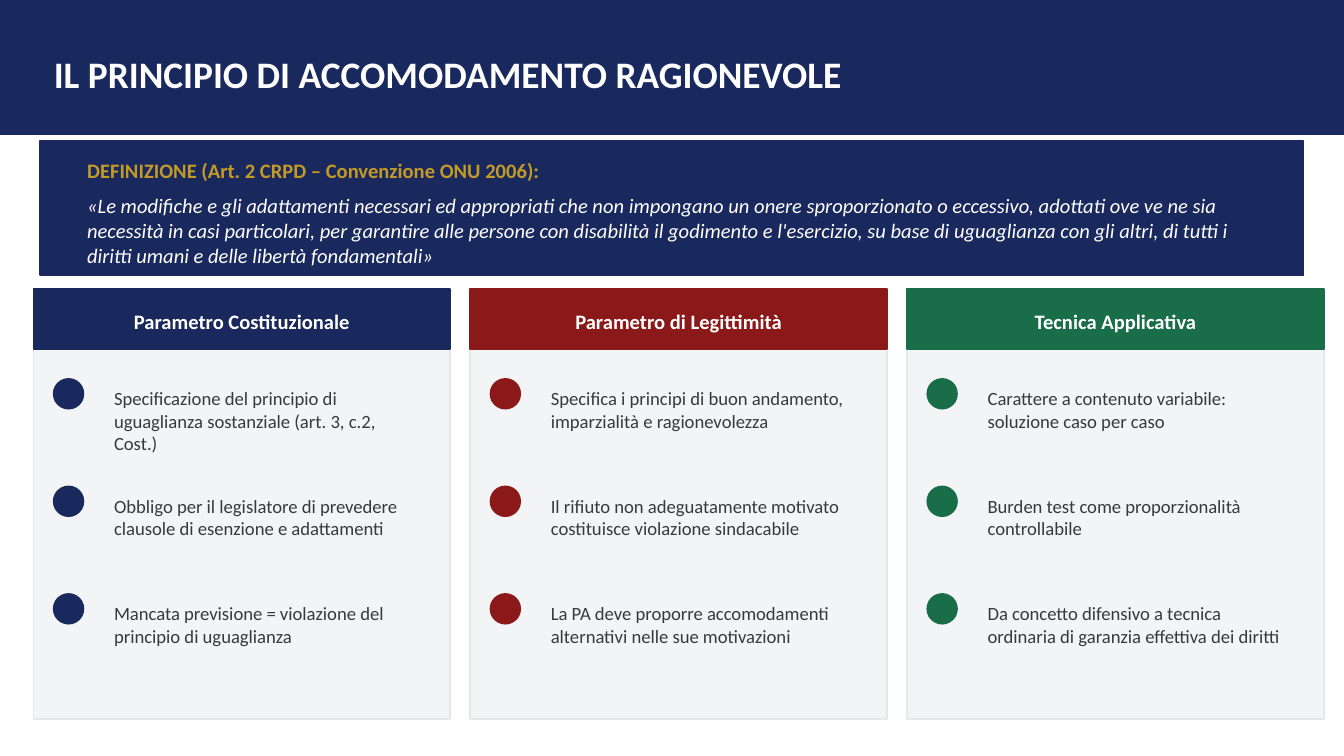
import pptx
import pptx.dml.color
import pptx.enum.shapes
import pptx.enum.text
import pptx.util
from dataclasses import dataclass

Inches = pptx.util.Inches
SHAPE = pptx.enum.shapes.MSO_SHAPE
ALIGN = pptx.enum.text.PP_ALIGN


@dataclass(frozen=True)
class Theme:
    font: str = "Calibri"
    navy: str = "19295D"
    red: str = "8B1919"
    green: str = "196D49"
    gold: str = "C49A27"
    white: str = "FFFFFF"
    panel: str = "F3F4F6"
    border: str = "E5E7EB"
    ink: str = "393939"
    title_size: int = 20
    heading_size: int = 11
    body_size: int = 10


THEME = Theme()

COLUMNS = [
    ("Parametro Costituzionale", THEME.navy, [
        "Specificazione del principio di uguaglianza sostanziale (art. 3, c.2, Cost.)",
        "Obbligo per il legislatore di prevedere clausole di esenzione e adattamenti",
        "Mancata previsione = violazione del principio di uguaglianza",
    ]),
    ("Parametro di Legittimità", THEME.red, [
        "Specifica i principi di buon andamento, imparzialità e ragionevolezza",
        "Il rifiuto non adeguatamente motivato costituisce violazione sindacabile",
        "La PA deve proporre accomodamenti alternativi nelle sue motivazioni",
    ]),
    ("Tecnica Applicativa", THEME.green, [
        "Carattere a contenuto variabile: soluzione caso per caso",
        "Burden test come proporzionalità controllabile",
        "Da concetto difensivo a tecnica ordinaria di garanzia effettiva dei diritti",
    ]),
]


def rgb(value):
    return pptx.dml.color.RGBColor.from_string(value)


def add_block(slide, kind, x, y, w, h, fill, line=None):
    sp = slide.shapes.add_shape(kind, Inches(x), Inches(y), Inches(w), Inches(h))
    sp.shadow.inherit = False
    sp.fill.solid()
    sp.fill.fore_color.rgb = rgb(fill)
    sp.line.color.rgb = rgb(line or fill)
    sp.line.width = pptx.util.Pt(1)


def set_text(sp, text, size, color, bold=False, italic=False, align=ALIGN.LEFT):
    tf = sp.text_frame
    tf.word_wrap = True
    tf.auto_size = pptx.enum.text.MSO_AUTO_SIZE.SHAPE_TO_FIT_TEXT
    tf.vertical_anchor = pptx.enum.text.MSO_ANCHOR.TOP
    p = tf.paragraphs[0]
    p.text = text
    p.alignment = align
    p.font.name = THEME.font
    p.font.size = pptx.util.Pt(size)
    p.font.color.rgb = rgb(color)
    p.font.bold = bold
    p.font.italic = italic


def add_text(slide, x, y, w, h, text, size, color, **style):
    sp = slide.shapes.add_textbox(Inches(x), Inches(y), Inches(w), Inches(h))
    set_text(sp, text, size, color, **style)


def add_header(slide, x, y, w, h):
    add_block(slide, SHAPE.RECTANGLE, x, y, w, h, THEME.navy)
    title = slide.shapes.title
    title.left, title.top = Inches(x + 0.3), Inches(y + 0.33)
    title.width, title.height = Inches(w - 0.6), Inches(0.38)
    set_text(title, "IL PRINCIPIO DI ACCOMODAMENTO RAGIONEVOLE",
             THEME.title_size, THEME.white, bold=True)
    # Bring the title in front of the band
    slide.shapes[-1].element.addnext(title.element)


def add_definition(slide, x, y, w, h):
    add_block(slide, SHAPE.RECTANGLE, x, y, w, h, THEME.navy)
    add_text(slide, x + 0.25, y + 0.08, w - 0.5, 0.25,
             "DEFINIZIONE (Art. 2 CRPD – Convenzione ONU 2006):",
             THEME.heading_size, THEME.gold, bold=True)
    add_text(slide, x + 0.25, y + 0.34, w - 0.5, 0.61,
             "«Le modifiche e gli adattamenti necessari ed appropriati che non "
             "impongano un onere sproporzionato o eccessivo, adottati ove ve ne sia "
             "necessità in casi particolari, per garantire alle persone con disabilità "
             "il godimento e l'esercizio, su base di uguaglianza con gli altri, di tutti "
             "i diritti umani e delle libertà fondamentali»",
             THEME.heading_size, THEME.white, italic=True)


def add_column(slide, x, y, w, h, heading, color, items):
    # Panel and coloured heading
    add_block(slide, SHAPE.RECTANGLE, x, y, w, h, THEME.panel, THEME.border)
    add_block(slide, SHAPE.RECTANGLE, x, y, w, 0.45, color)
    add_text(slide, x + 0.15, y + 0.1, w - 0.3, 0.25, heading,
             THEME.heading_size, THEME.white, bold=True, align=ALIGN.CENTER)
    # Items, each with a round marker
    for i, item in enumerate(items):
        top = y + 0.67 + 0.8 * i
        add_block(slide, SHAPE.OVAL, x + 0.15, top, 0.22, 0.22, color)
        add_text(slide, x + 0.5, top + 0.01, w - 0.65, 0.43, item,
                 THEME.body_size, THEME.ink)


def main():
    prs = pptx.Presentation()
    # Widescreen, 16:9
    prs.slide_width = Inches(10)
    prs.slide_height = Inches(10 * 9 / 16)
    slide = prs.slides.add_slide(prs.slide_layouts.get_by_name("Title Only"))

    add_header(slide, 0, 0, 10, 1)
    add_definition(slide, 0.3, 1.05, 9.4, 1)
    width, gap = 3.1, 0.15
    for i, column in enumerate(COLUMNS):
        add_column(slide, 0.25 + i * (width + gap), 2.15, width, 3.2, *column)

    prs.save("out.pptx")


if __name__ == "__main__":
    main()
